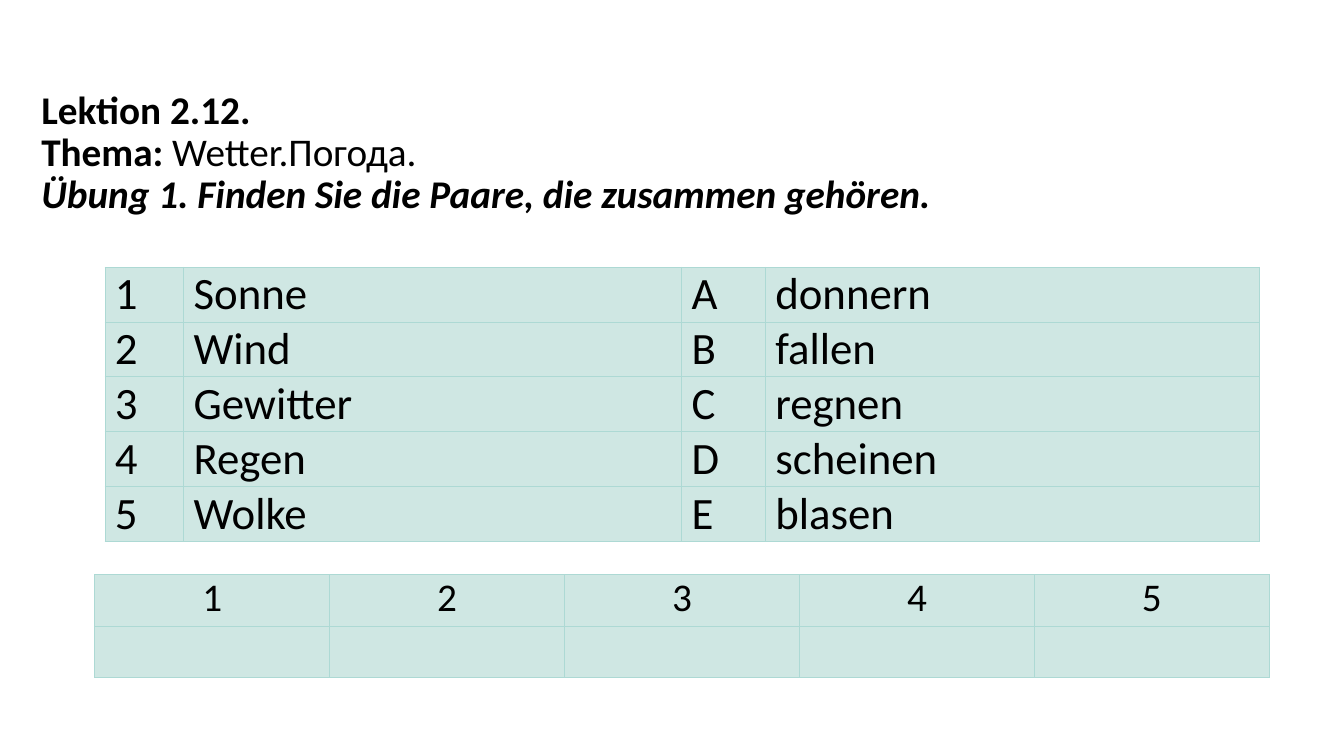
from lxml import etree
from pptx import Presentation
from pptx.dml.color import RGBColor
from pptx.enum.text import MSO_ANCHOR, MSO_AUTO_SIZE, PP_ALIGN
from pptx.oxml.ns import qn
from pptx.util import Inches, Pt

COLORS = {"text": "000000", "cell": "CFE7E3", "border": "ADD9D4"}
FONT = "Calibri"


def add_span(para, text, size, bold=False, italic=False):
    span = para.add_run()
    span.text = text
    span.font.name = FONT
    span.font.size = Pt(size)
    span.font.bold = bold
    span.font.italic = italic
    span.font.color.rgb = RGBColor.from_string(COLORS["text"])


def add_grid(rows, left, top, widths, row_height, size, align):
    """Add a table with one fill and thin borders around every cell."""
    table = page.shapes.add_table(
        len(rows), len(widths), Inches(left), Inches(top),
        Inches(sum(widths)), Inches(row_height * len(rows))).table
    table.first_row = False
    table.horz_banding = False
    for column, width in zip(table.columns, widths):
        column.width = Inches(width)
    for row, texts in zip(table.rows, rows):
        row.height = Inches(row_height)
        for cell, text in zip(row.cells, texts):
            cell.margin_left = cell.margin_right = Inches(0.1)
            cell.margin_top = cell.margin_bottom = 0
            para = cell.text_frame.paragraphs[0]
            para.alignment = align
            if text:
                add_span(para, text, size)
            properties = cell._tc.get_or_add_tcPr()
            for side in ("a:lnL", "a:lnR", "a:lnT", "a:lnB"):
                line = etree.SubElement(properties, qn(side), w=str(Pt(0.5)))
                fill = etree.SubElement(line, qn("a:solidFill"))
                etree.SubElement(fill, qn("a:srgbClr"), val=COLORS["border"])
            cell.fill.solid()
            cell.fill.fore_color.rgb = RGBColor.from_string(COLORS["cell"])


deck = Presentation()
deck.slide_width = Inches(13.33)
deck.slide_height = Inches(7.5)
page = deck.slides.add_slide(deck.slide_layouts[5])

title = page.shapes.title
title.left, title.top = Inches(0.31), Inches(0.47)
title.width, title.height = Inches(12), Inches(2.11)
frame = title.text_frame
frame.word_wrap = True
frame.auto_size = MSO_AUTO_SIZE.NONE
frame.vertical_anchor = MSO_ANCHOR.MIDDLE
heading = frame.paragraphs[0]
heading.alignment = PP_ALIGN.LEFT
heading.line_spacing = 0.9
add_span(heading, "Lektion 2.12.", 28, bold=True)
heading.add_line_break()
add_span(heading, "Thema:", 28, bold=True)
add_span(heading, " Wetter.Погода.", 28)
heading.add_line_break()
add_span(heading, "Übung 1. Finden Sie die Paare, die zusammen gehören.", 28,
         bold=True, italic=True)

pairs = [
    ("1", "Sonne", "A", "donnern"),
    ("2", "Wind", "B", "fallen"),
    ("3", "Gewitter", "C", "regnen"),
    ("4", "Regen", "D", "scheinen"),
    ("5", "Wolke", "E", "blasen"),
]
add_grid(pairs, 1.04, 2.65, [0.78, 4.94, 0.83, 4.9], 0.54, 32, PP_ALIGN.LEFT)

answers = [[pair[0] for pair in pairs], [""] * len(pairs)]
add_grid(answers, 0.94, 5.7, [2.33] * len(pairs), 0.51, 28, PP_ALIGN.CENTER)

deck.save("out.pptx")
